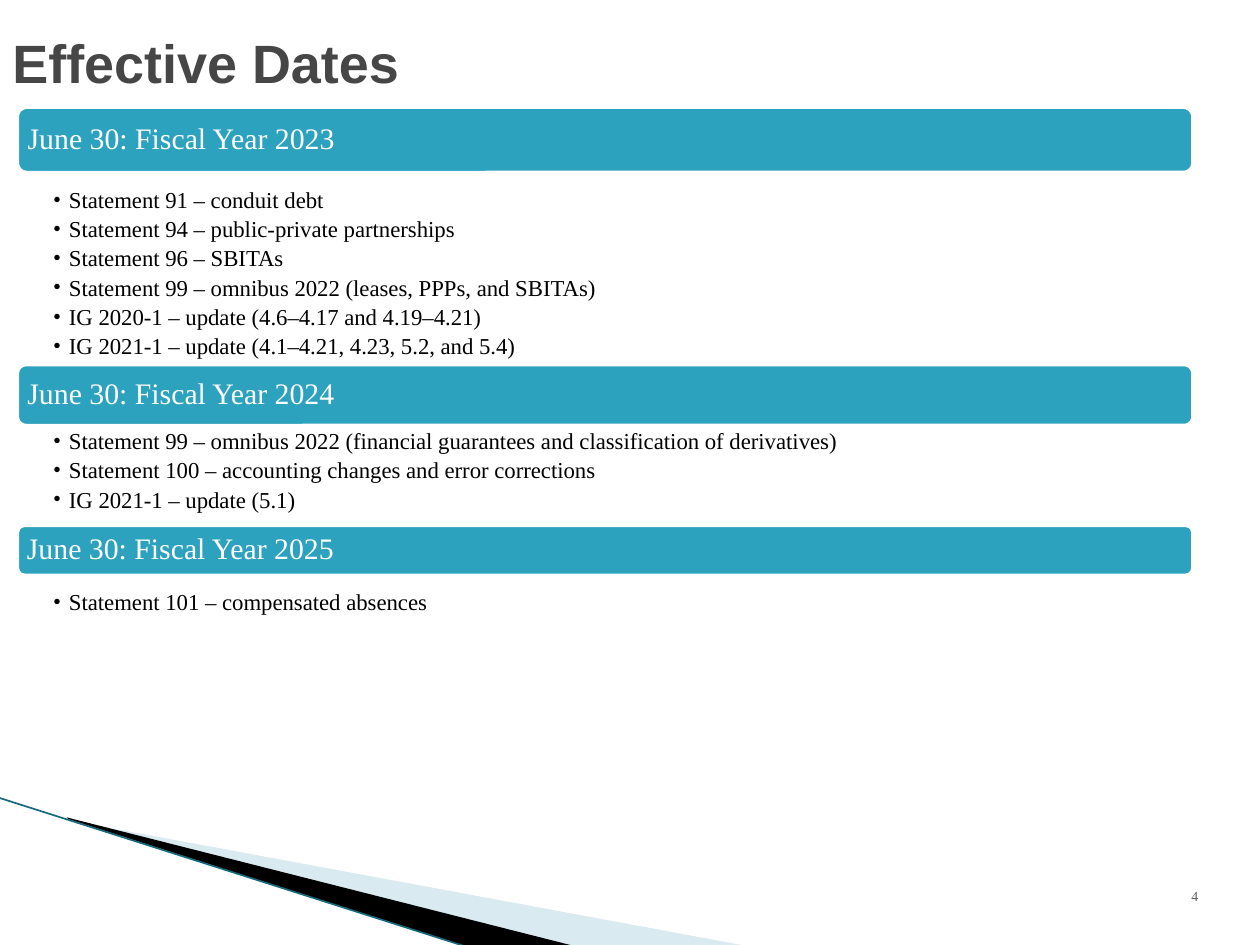
from typing import NamedTuple

from lxml import etree
from pptx import Presentation
from pptx.dml.color import RGBColor
from pptx.enum.shapes import MSO_CONNECTOR, MSO_SHAPE
from pptx.enum.text import MSO_ANCHOR, PP_ALIGN
from pptx.oxml.ns import qn
from pptx.util import Cm, Pt

LINE = MSO_CONNECTOR.STRAIGHT
ROUND = MSO_SHAPE.ROUNDED_RECTANGLE
MIDDLE = MSO_ANCHOR.MIDDLE
TOP = MSO_ANCHOR.TOP
LEFT, CENTER = PP_ALIGN.LEFT, PP_ALIGN.CENTER

WHITE = RGBColor(0xFF, 0xFF, 0xFF)
BLACK = RGBColor(0, 0, 0)
TEAL = RGBColor(0x2D, 0xA2, 0xBF)
DEEP = RGBColor(0x16, 0x69, 0x7A)
PALE = RGBColor(0xA0, 0xCB, 0xDC)
DARK = RGBColor(0x46, 0x46, 0x46)
GRAY = RGBColor(0x5F, 0x5F, 0x5F)
SERIF = "Times New Roman"
EDGE, WIDTH = 0.31, 23.78  # shared left edge and width of bars and lists, cm


class Year(NamedTuple):
    name: str
    top: float
    height: float
    list_top: float
    list_height: float
    items: list[str]


YEARS = [
    Year("2023", 2.12, 1.4, 3.76, 3.56, [
        "Statement 91 – conduit debt",
        "Statement 94 – public-private partnerships",
        "Statement 96 – SBITAs",
        "Statement 99 – omnibus 2022 (leases, PPPs, and SBITAs)",
        "IG 2020-1 – update (4.6–4.17 and 4.19–4.21)",
        "IG 2021-1 – update (4.1–4.21, 4.23, 5.2, and 5.4)",
    ]),
    Year("2024", 7.31, 1.31, 8.62, 1.9, [
        "Statement 99 – omnibus 2022 (financial guarantees and classification of derivatives)",
        "Statement 100 – accounting changes and error corrections",
        "IG 2021-1 – update (5.1)",
    ]),
    Year("2025", 10.55, 1.09, 11.86, 0.64, ["Statement 101 – compensated absences"]),
]


def set_frame(frame, insets: tuple, anchor) -> None:
    frame.word_wrap = True
    frame.vertical_anchor = anchor
    (frame.margin_left, frame.margin_top,
     frame.margin_right, frame.margin_bottom) = map(Cm, insets)


def set_font(part, size: float, color: RGBColor, name: str = SERIF) -> None:
    for run in part.runs:
        run.font.size, run.font.name = Pt(size), name
        run.font.color.rgb = color


def add_wedge(slide, points: list, color: RGBColor, alpha: int = 100) -> None:
    spots = [(Cm(x), Cm(y)) for x, y in points]
    pen = slide.shapes.build_freeform(*spots[0])
    pen.add_line_segments(spots[1:], close=True)
    wedge = pen.convert_to_shape()
    wedge.shadow.inherit = False
    wedge.fill.solid()
    wedge.fill.fore_color.rgb = color
    wedge.line.fill.background()
    if alpha < 100:
        tint = next(wedge.element.spPr.iter(qn("a:srgbClr")))
        etree.SubElement(tint, qn("a:alpha"), val=str(alpha * 1000))


def add_bar(slide, year: Year) -> None:
    bar = slide.shapes.add_shape(
        ROUND, Cm(EDGE), Cm(year.top), Cm(WIDTH), Cm(year.height))
    bar.shadow.inherit = False
    bar.fill.solid()
    bar.fill.fore_color.rgb = TEAL
    bar.line.color.rgb = WHITE
    bar.line.width = Pt(4.33)
    set_frame(bar.text_frame, (0.18, 0.18, 0.18, 0.18), MIDDLE)
    bar.text_frame.text = f"June 30: Fiscal Year {year.name}"
    line = bar.text_frame.paragraphs[0]
    line.alignment = LEFT
    line.line_spacing = 0.9
    set_font(line, 17, WHITE)


def add_list(slide, year: Year) -> None:
    box = slide.shapes.add_textbox(
        Cm(EDGE), Cm(year.list_top), Cm(WIDTH), Cm(year.list_height))
    set_frame(box.text_frame, (0.76, 0.05, 0.25, 0.05), TOP)
    box.text_frame.text = "\n".join(year.items)
    for line in box.text_frame.paragraphs:
        props = line._p.get_or_add_pPr()
        props.set("marL", str(Cm(0.32)))
        props.set("indent", str(Cm(-0.32)))
        etree.SubElement(props, qn("a:buFont"), typeface=SERIF)
        etree.SubElement(props, qn("a:buChar"), char="•")
        line.level = 1
        line.line_spacing = 0.9
        line.space_after = Pt(2.6)
        set_font(line, 13, BLACK)
        # The bullet takes its height from the paragraph end mark
        etree.SubElement(line._p, qn("a:endParaRPr"), sz="1300")


def main() -> None:
    deck = Presentation()
    deck.slide_width, deck.slide_height = Cm(25.4), Cm(19.05)
    slide = deck.slides.add_slide(deck.slide_layouts[5])

    # Corner decoration
    add_wedge(slide, [(1.4, 16.54), (15.11, 19.08), (11.58, 19.08), (1.4, 16.51)], PALE, 40)
    add_wedge(slide, [(1.35, 16.48), (11.61, 19.08), (9.45, 19.1), (1.37, 16.51)], BLACK)
    edge = slide.shapes.add_connector(LINE, Cm(-0.03), Cm(16.08), Cm(9.45), Cm(19.1))
    edge.line.color.rgb = DEEP
    edge.line.width = Pt(0.95)
    etree.SubElement(edge.element.spPr, qn("a:effectLst"))

    # Fiscal years
    for year in YEARS:
        add_bar(slide, year)
        add_list(slide, year)

    # Title
    title = slide.shapes.title
    title.left, title.top = Cm(0), Cm(0)
    title.width, title.height = Cm(25.4), Cm(2.49)
    set_frame(title.text_frame, (0.25, 0, 0, 0), MIDDLE)
    title.text_frame.text = "Effective Dates"
    head = title.text_frame.paragraphs[0]
    head.alignment = LEFT
    set_font(head, 30.8, DARK, "Arial")
    head.runs[0].font.bold = True

    # Slide number
    box = slide.shapes.add_textbox(Cm(22.78), Cm(17.65), Cm(2.62), Cm(0.84))
    set_frame(box.text_frame, (0.25, 0.13, 0.25, 0.13), MIDDLE)
    box.text_frame.text = "4"
    box.text_frame.paragraphs[0].alignment = CENTER
    set_font(box.text_frame.paragraphs[0], 7.9, GRAY)

    deck.save("out.pptx")


if __name__ == "__main__":
    main()
